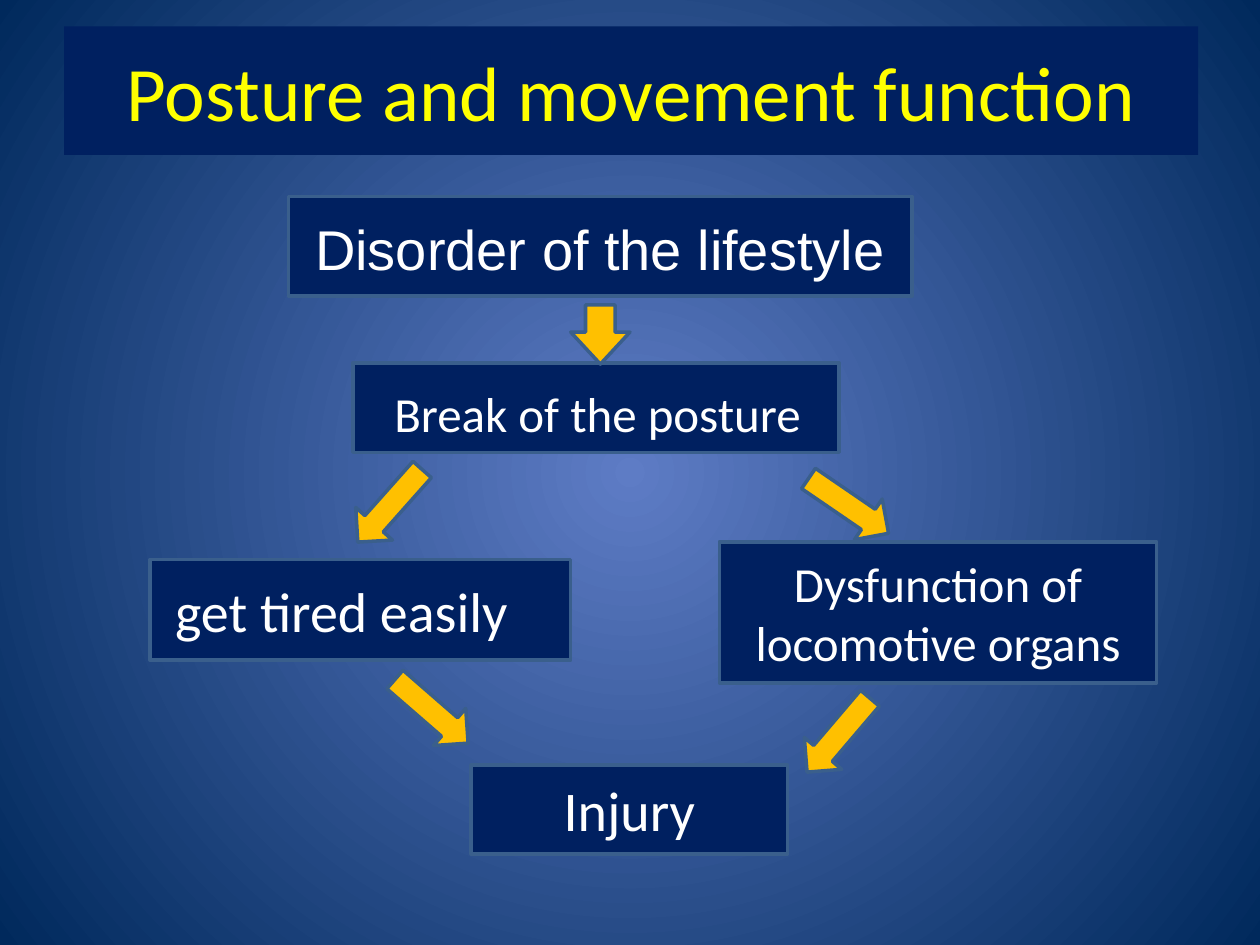
"""Build the posture and movement function flow slide."""
from dataclasses import dataclass

from lxml import etree
from pptx import Presentation
from pptx.dml.color import RGBColor
from pptx.enum.shapes import MSO_SHAPE
from pptx.enum.text import MSO_ANCHOR, PP_ALIGN
from pptx.oxml import parse_xml
from pptx.oxml.ns import nsdecls, qn
from pptx.util import Inches, Pt

RECTANGLE, DOWN_ARROW = MSO_SHAPE.RECTANGLE, MSO_SHAPE.DOWN_ARROW
LEFT, CENTER = PP_ALIGN.LEFT, PP_ALIGN.CENTER
MIDDLE = MSO_ANCHOR.MIDDLE


@dataclass(frozen=True)
class Theme:
    glow: str = "5E7CC5"
    edge: str = "00295C"
    navy: str = "002060"
    outline: str = "3A5F8C"
    arrow: str = "FFC000"
    yellow: str = "FFFF00"
    white: str = "FFFFFF"
    body_font: str = "Calibri"
    lifestyle_font: str = "Arial"
    title_size: int = 44
    large: int = 32
    medium: int = 28
    line_width: int = 2


theme = Theme()


def paint(shape, color):
    shape.shadow.inherit = False
    shape.fill.solid()
    shape.fill.fore_color.rgb = RGBColor.from_string(color)
    shape.line.color.rgb = RGBColor.from_string(theme.outline)
    shape.line.width = Pt(theme.line_width)


def write(text_frame, text, font, size, color, alignment):
    text_frame.text = text
    text_frame.word_wrap = True
    text_frame.vertical_anchor = MIDDLE
    for paragraph in text_frame.paragraphs:
        paragraph.alignment = alignment
        for run in paragraph.runs:
            run.font.name = font
            run.font.size = Pt(size)
            run.font.color.rgb = RGBColor.from_string(color)


presentation = Presentation()
presentation.slide_width, presentation.slide_height = Inches(10), Inches(7.5)
slide = presentation.slides.add_slide(presentation.slide_layouts[5])

background = slide.background.fill
background.gradient()
for stop, color, position in zip(background.gradient_stops, (theme.glow, theme.edge), (0, 1)):
    stop.color.rgb = RGBColor.from_string(color)
    stop.position = position
gradient = next(slide.element.iter(qn("a:gradFill")))
linear = gradient.find(qn("a:lin"))
gradient.replace(linear, parse_xml(f'<a:path {nsdecls("a")} path="circle"/>'))
etree.SubElement(gradient[-1], qn("a:fillToRect"), l="50000", t="50000", r="50000", b="50000")

title = slide.shapes.title
title.left, title.top, title.width, title.height = map(Inches, (0.51, 0.21, 9, 1.02))
title.fill.solid()
title.fill.fore_color.rgb = RGBColor.from_string(theme.navy)
write(title.text_frame, "Posture and movement function",
      theme.body_font, theme.title_size, theme.yellow, CENTER)

boxes = [
    ("Disorder of the lifestyle", (2.29, 1.56, 4.95, 0.79),
     theme.lifestyle_font, theme.large, LEFT, 0.21, 0.08),
    ("Break of the posture", (2.8, 2.88, 3.86, 0.71),
     theme.body_font, theme.medium, LEFT, 0.33, 0.13),
    ("get tired easily", (1.19, 4.44, 3.34, 0.8),
     theme.body_font, theme.large, LEFT, 0.2, 0.05),
    ("Dysfunction of\nlocomotive organs", (5.71, 4.3, 3.47, 1.12),
     theme.body_font, theme.medium, CENTER, 0.1, 0.05),
    ("Injury", (3.74, 6.07, 2.51, 0.71),
     theme.body_font, theme.large, CENTER, 0.1, 0.05),
]
for text, bounds, font, size, alignment, margin_left, margin_top in boxes:
    box = slide.shapes.add_shape(RECTANGLE, *map(Inches, bounds))
    paint(box, theme.navy)
    box.text_frame.margin_left = Inches(margin_left)
    box.text_frame.margin_top = Inches(margin_top)
    write(box.text_frame, text, font, size, theme.white, alignment)

arrows = [
    ((4.53, 2.42, 0.47, 0.47), 0, 0.54),
    ((2.9, 3.63, 0.39, 0.77), 41.6, 0.5),
    ((6.54, 3.63, 0.39, 0.77), 304.4, 0.5),
    ((3.23, 5.26, 0.39, 0.77), 311, 0.5),
    ((6.46, 5.45, 0.39, 0.77), 40.4, 0.5),
]
for bounds, rotation, head_length in arrows:
    arrow = slide.shapes.add_shape(DOWN_ARROW, *map(Inches, bounds))
    arrow.rotation = rotation
    arrow.adjustments[1] = head_length
    paint(arrow, theme.arrow)

presentation.save("out.pptx")
